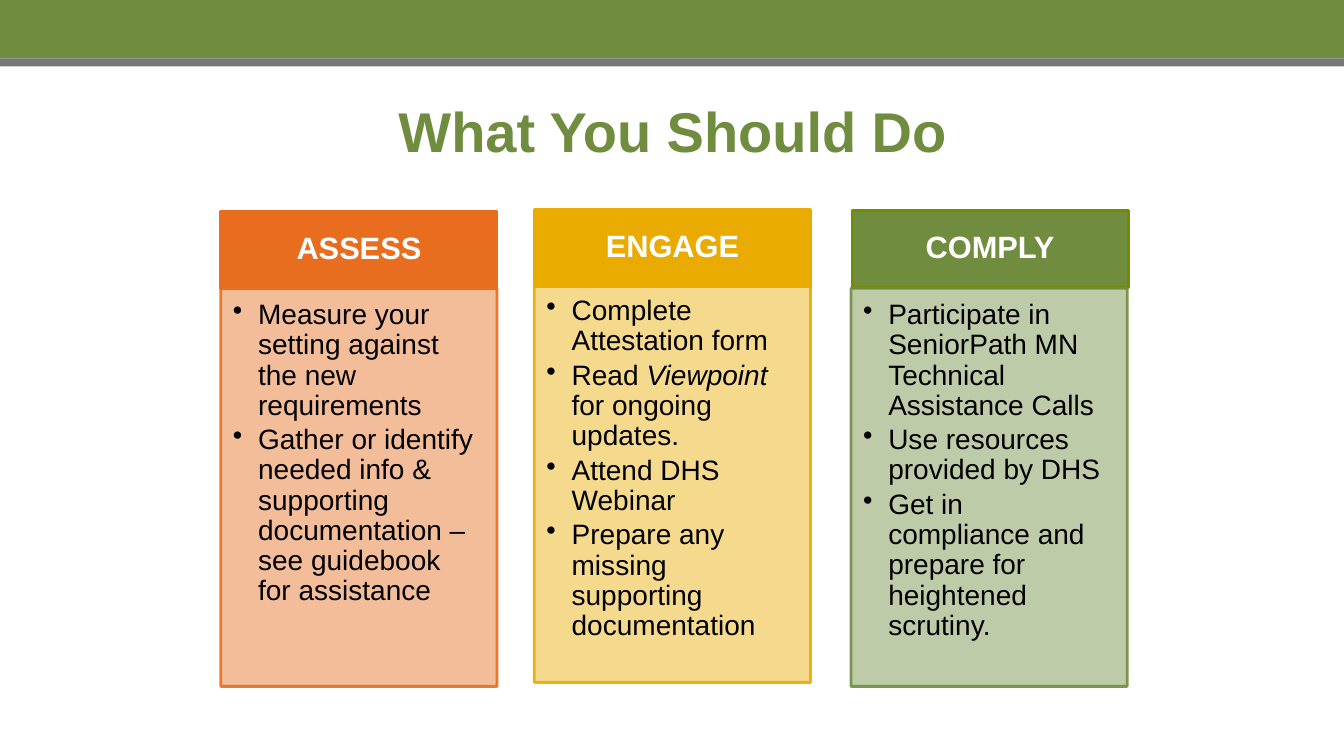
from lxml import etree
from pptx import Presentation
from pptx.dml.color import RGBColor
from pptx.enum import shapes, text
from pptx.oxml.ns import qn
from pptx.util import Inches, Pt

GREEN = RGBColor(0x70, 0x8C, 0x3F)
DARK_GREEN = RGBColor(0x70, 0x8C, 0x03)
GRAY = RGBColor(0x75, 0x77, 0x7A)
ORANGE = RGBColor(0xE8, 0x6D, 0x1F)
GOLD = RGBColor(0xEA, 0xAB, 0x00)
WHITE = RGBColor(0xFF, 0xFF, 0xFF)
BLACK = RGBColor(0x00, 0x00, 0x00)

CARD_WIDTH = 2.74
HEADER_HEIGHT = 0.76
BODY_HEIGHT = 3.95

presentation = Presentation()
presentation.slide_width = Inches(13.33)
presentation.slide_height = Inches(7.5)
slide = presentation.slides.add_slide(presentation.slide_layouts[5])


def add_run(paragraph, wording, size=20, color=BLACK, bold=False, italic=False):
    run = paragraph.add_run()
    run.text = wording
    run.font.name = "Arial"
    run.font.size = Pt(size)
    run.font.color.rgb = color
    run.font.bold = bold
    run.font.italic = italic


def add_box(left, top, width, height, fill, line=None, fill_alpha=100, line_alpha=100,
            insets=(0, 0, 0, 0), anchor=text.MSO_ANCHOR.MIDDLE):
    box = slide.shapes.add_shape(shapes.MSO_SHAPE.RECTANGLE, Inches(left), Inches(top),
                                 Inches(width), Inches(height))
    box.shadow.inherit = False
    box.fill.solid()
    box.fill.fore_color.rgb = fill
    if line is None:
        box.line.fill.background()
    else:
        box.line.color.rgb = line
        box.line.width = Pt(2)
    # Transparency: the first colour is the fill, the second the line
    for color, alpha in zip(box._element.spPr.iter(qn("a:srgbClr")), (fill_alpha, line_alpha)):
        if alpha < 100:
            etree.SubElement(color, qn("a:alpha"), val=str(alpha * 1000))
    frame = box.text_frame
    frame.word_wrap = True
    frame.vertical_anchor = anchor
    frame.margin_left, frame.margin_top, frame.margin_right, frame.margin_bottom = map(Inches, insets)
    return frame


# Top bands
add_box(0, 0, 13.33, 0.58, GREEN)
add_box(0, 0.58, 13.33, 0.08, GRAY)

# Title
title = slide.shapes.title
title.left, title.top, title.width, title.height = map(Inches, (0.67, 0.67, 12, 1.25))
title.text_frame.vertical_anchor = text.MSO_ANCHOR.MIDDLE
title_paragraph = title.text_frame.paragraphs[0]
title_paragraph.alignment = text.PP_ALIGN.CENTER
add_run(title_paragraph, "What You Should Do", size=40, color=GREEN, bold=True)

# Cards: heading, header position, body position, colour, header line, bullets.
# Each bullet is a list of pieces; every second piece is italic.
cards = [
    ("ASSESS", (2.19, 2.1), (2.19, 2.86), ORANGE, ORANGE, [
        ["Measure your setting against the new requirements"],
        ["Gather or identify needed info & supporting documentation – see guidebook for assistance"],
    ]),
    ("ENGAGE", (5.3, 2.08), (5.3, 2.82), GOLD, GOLD, [
        ["Complete Attestation form"],
        ["Read ", "Viewpoint", " for ongoing updates."],
        ["Attend DHS Webinar"],
        ["Prepare any missing supporting documentation"],
    ]),
    ("COMPLY", (8.45, 2.09), (8.44, 2.86), GREEN, DARK_GREEN, [
        ["Participate in SeniorPath MN Technical Assistance Calls"],
        ["Use resources provided by DHS"],
        ["Get in compliance and prepare for heightened scrutiny."],
    ]),
]

for heading, header_position, body_position, color, header_line, bullets in cards:
    # Header
    header = add_box(*header_position, CARD_WIDTH, HEADER_HEIGHT, color, header_line,
                     insets=(0.17, 0.1, 0.17, 0.1))
    header_paragraph = header.paragraphs[0]
    header_paragraph.alignment = text.PP_ALIGN.CENTER
    header_paragraph.line_spacing = 0.9
    add_run(header_paragraph, heading, size=22, color=WHITE, bold=True)

    # Bulleted body
    body = add_box(*body_position, CARD_WIDTH, BODY_HEIGHT, color, color, fill_alpha=45,
                   line_alpha=90, insets=(0.12, 0.12, 0.16, 0.17), anchor=text.MSO_ANCHOR.TOP)
    for index, pieces in enumerate(bullets):
        paragraph = body.add_paragraph() if index else body.paragraphs[0]
        paragraph.alignment = text.PP_ALIGN.LEFT
        paragraph.line_spacing = 0.9
        paragraph.space_after = Pt(3)
        properties = paragraph._p.get_or_add_pPr()
        properties.set("marL", str(Inches(0.25)))
        properties.set("indent", str(Inches(-0.25)))
        etree.SubElement(properties, qn("a:buChar"), char="•")
        for position, piece in enumerate(pieces):
            add_run(paragraph, piece, italic=position % 2 == 1)

presentation.save("out.pptx")
